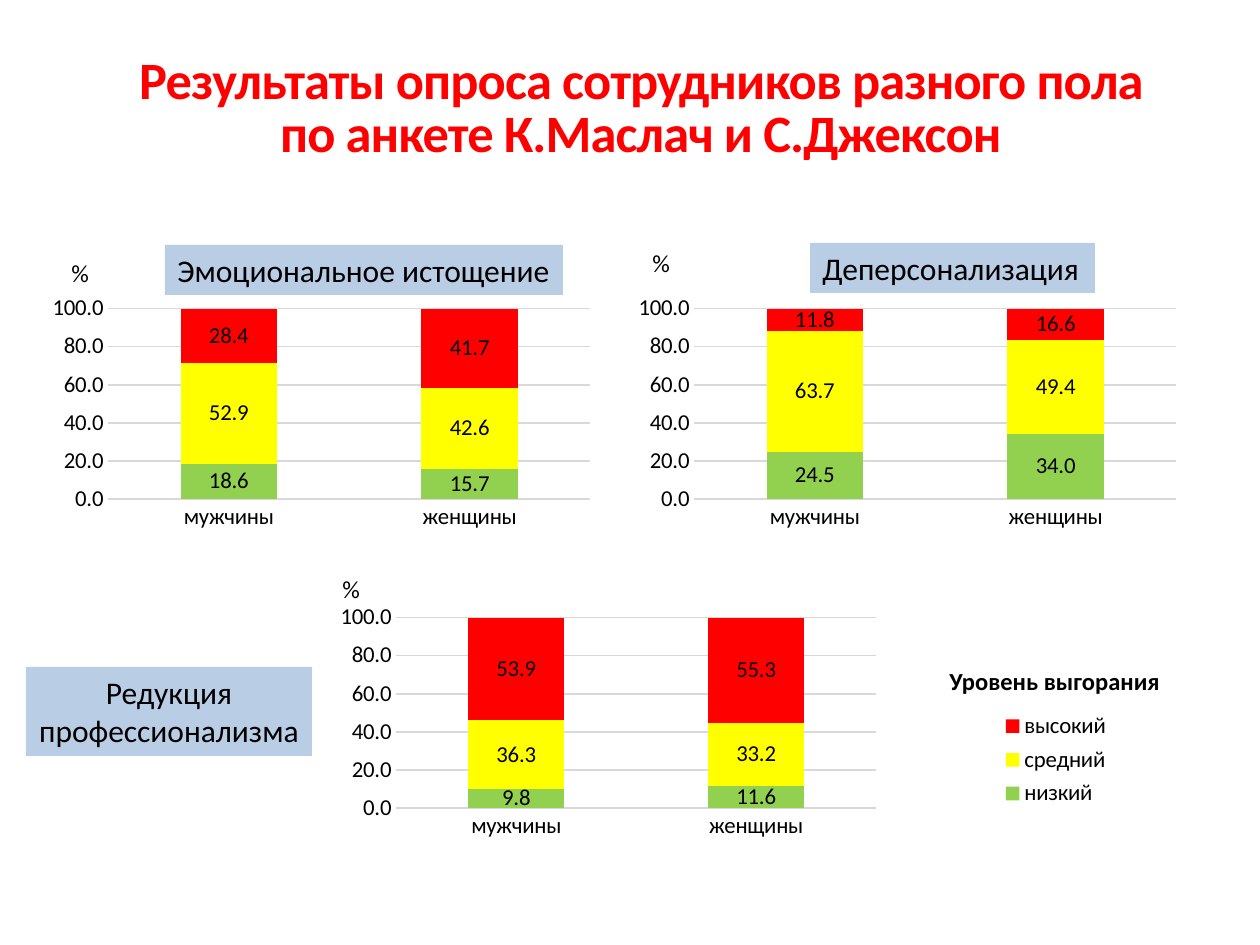
from dataclasses import dataclass

from lxml import etree
from pptx import Presentation
from pptx.chart.data import CategoryChartData
from pptx.dml.color import RGBColor
from pptx.enum.chart import (XL_CHART_TYPE, XL_LABEL_POSITION,
                             XL_LEGEND_POSITION, XL_TICK_MARK)
from pptx.enum.shapes import MSO_SHAPE
from pptx.enum.text import MSO_ANCHOR, MSO_AUTO_SIZE, PP_ALIGN
from pptx.oxml.ns import qn
from pptx.util import Emu, Pt

STACKED = XL_CHART_TYPE.COLUMN_STACKED
LABEL_CENTER = XL_LABEL_POSITION.CENTER
LEGEND_RIGHT = XL_LEGEND_POSITION.RIGHT
NO_TICK = XL_TICK_MARK.NONE
RECTANGLE = MSO_SHAPE.RECTANGLE
TOP, BOTTOM = MSO_ANCHOR.TOP, MSO_ANCHOR.BOTTOM
GROW, FIXED = MSO_AUTO_SIZE.SHAPE_TO_FIT_TEXT, MSO_AUTO_SIZE.NONE
LEFT, CENTER = PP_ALIGN.LEFT, PP_ALIGN.CENTER
EMU_PER_PX = 914400 / 126
TITLE_ONLY = 5


@dataclass(frozen=True)
class Theme:
    """Colours, font and type sizes of the slide."""
    font: str = "Calibri"
    text: str = "000000"
    title: str = "FF0000"
    panel: str = "B9CDE5"
    grid: str = "D9D9D9"
    levels: tuple = ("92D050", "FFFF00", "FF0000")
    title_size: int = 30
    panel_size: int = 18
    note_size: int = 14
    chart_size: int = 13


def px(length):
    """Turn pixels into EMU."""
    return Emu(round(length * EMU_PER_PX))


def apply(target, **values):
    """Set each named attribute on the target."""
    for name, value in values.items():
        setattr(target, name, value)


def place(target, box):
    """Move and size a shape to a pixel box."""
    apply(target, **dict(zip(("left", "top", "width", "height"), map(px, box))))


def set_layout(parent, index, fractions, inner=False):
    """Give a plot area or legend a manual layout."""
    for old in parent.findall(qn("c:layout")):
        parent.remove(old)
    layout = etree.Element(qn("c:layout"))
    parent.insert(index, layout)
    manual = etree.SubElement(layout, qn("c:manualLayout"))
    values = {"layoutTarget": "inner"} if inner else {}
    values |= {"xMode": "edge", "yMode": "edge"}
    values |= dict(zip("xywh", fractions))
    for tag, value in values.items():
        etree.SubElement(manual, qn(f"c:{tag}")).set("val", str(value))


class SlideBuilder:
    """Hold the theme and the current slide."""

    def __init__(self, slide, theme):
        """Keep the slide and its theme."""
        self.slide, self.theme = slide, theme

    def style(self, font, size, color=None, bold=False):
        """Format a font from the theme."""
        apply(font, name=self.theme.font, size=Pt(size), bold=bold)
        font.color.rgb = RGBColor.from_string(color or self.theme.text)

    def fill_text(self, frame, lines, size, align=LEFT, color=None, bold=False):
        """Fill a text frame with one paragraph per line."""
        for number, line in enumerate(lines):
            paragraph = frame.add_paragraph() if number else frame.paragraphs[0]
            paragraph.alignment = align
            run = paragraph.add_run()
            run.text = line
            self.style(run.font, size, color, bold)

    def title(self, heading, box):
        """Fill the title placeholder."""
        title = self.slide.shapes.title
        place(title, box)
        frame = title.text_frame
        apply(frame, word_wrap=True, auto_size=FIXED, vertical_anchor=BOTTOM)
        self.fill_text(frame, [heading], self.theme.title_size, CENTER,
                       self.theme.title, True)
        paragraph = frame.paragraphs[0]
        paragraph.line_spacing = 0.85
        paragraph.runs[0].font._element.set("spc", "-50")

    def note(self, wording, box, bold=False, wrap=True):
        """Add a small text box."""
        frame = self.slide.shapes.add_textbox(*map(px, box)).text_frame
        apply(frame, word_wrap=wrap, auto_size=GROW)
        self.fill_text(frame, [wording], self.theme.note_size, bold=bold)

    def panel(self, lines, box, align=LEFT, wrap=False):
        """Add a filled scale name."""
        panel = self.slide.shapes.add_shape(RECTANGLE, *map(px, box))
        panel.shadow.inherit = False
        panel.fill.solid()
        panel.fill.fore_color.rgb = RGBColor.from_string(self.theme.panel)
        panel.line.fill.background()
        frame = panel.text_frame
        apply(frame, word_wrap=wrap, auto_size=GROW, vertical_anchor=TOP)
        self.fill_text(frame, lines, self.theme.panel_size, align)

    def grid_line(self, line):
        """Format a thin grey chart line."""
        line.color.rgb = RGBColor.from_string(self.theme.grid)
        line.width = Pt(0.75)

    def chart(self, levels, box, plot_width, legend_layout=None):
        """Add a stacked column chart of burnout levels."""
        size = self.theme.chart_size
        data = CategoryChartData(number_format="0.0")
        data.categories = ["мужчины", "женщины"]
        for level, shares in levels.items():
            data.add_series(level, shares)
        chart = self.slide.shapes.add_chart(STACKED, *map(px, box), data).chart
        apply(chart, has_title=False, has_legend=bool(legend_layout))
        self.style(chart.font, size)
        set_layout(chart._chartSpace.chart.plotArea, 0,
                   (0.103, 0.043, plot_width, 0.639), inner=True)
        plot = chart.plots[0]
        apply(plot, gap_width=150, overlap=100, vary_by_categories=False)
        for series, color in zip(plot.series, self.theme.levels):
            series.format.fill.solid()
            series.format.fill.fore_color.rgb = RGBColor.from_string(color)
            labels = series.data_labels
            apply(labels, show_value=True, position=LABEL_CENTER,
                  number_format="0.0", number_format_is_linked=False)
            self.style(labels.font, size)
        share_axis, sex_axis = chart.value_axis, chart.category_axis
        for axis in (share_axis, sex_axis):
            apply(axis, major_tick_mark=NO_TICK, minor_tick_mark=NO_TICK)
            self.style(axis.tick_labels.font, size)
        self.grid_line(sex_axis.format.line)
        apply(share_axis, minimum_scale=0, maximum_scale=100, major_unit=20)
        apply(share_axis.tick_labels, number_format="0.0",
              number_format_is_linked=False)
        share_axis.format.line.fill.background()
        self.grid_line(share_axis.major_gridlines.format.line)
        if legend_layout:
            legend = chart.legend
            apply(legend, position=LEGEND_RIGHT, include_in_layout=False)
            self.style(legend.font, size)
            set_layout(legend._element, 1, legend_layout)


def main():
    """Build the survey slide and save it."""
    deck = Presentation()
    apply(deck, slide_width=px(1260), slide_height=px(945))
    slide = deck.slides.add_slide(deck.slide_layouts[TITLE_ONLY])
    builder = SlideBuilder(slide, Theme())
    builder.title("Результаты опроса сотрудников разного пола "
                  "по анкете К.Маслач и С.Джексон", (121, 0, 1040, 170))

    names = ("низкий", "средний", "высокий")
    exhaustion = ((18.6, 15.7), (52.9, 42.6), (28.4, 41.7))
    depersonalization = ((24.5, 34.0), (63.7, 49.4), (11.8, 16.6))
    reduction = ((9.8, 11.6), (36.3, 33.2), (53.9, 55.3))
    for shares, box, plot_width, legend_layout in (
            (exhaustion, (48, 295, 586, 299), 0.822, None),
            (depersonalization, (634, 295, 586, 299), 0.822, None),
            (reduction, (299, 604, 946, 299), 0.507, (0.73, 0.34, 0.14, 0.36))):
        builder.chart(dict(zip(names, shares)), box, plot_width, legend_layout)

    builder.panel(["Эмоциональное истощение"], (165, 245, 398, 50))
    builder.panel(["Деперсонализация"], (810, 243, 285, 50))
    builder.panel(["Редукция", "профессионализма"], (26, 667, 286, 89),
                  CENTER, wrap=True)
    for left, top in ((59, 252), (640, 242), (330, 568)):
        builder.note("%", (left, top, 34, 43))
    builder.note("Уровень выгорания", (937, 660, 237, 43), bold=True, wrap=False)
    deck.save("out.pptx")


if __name__ == "__main__":
    main()
